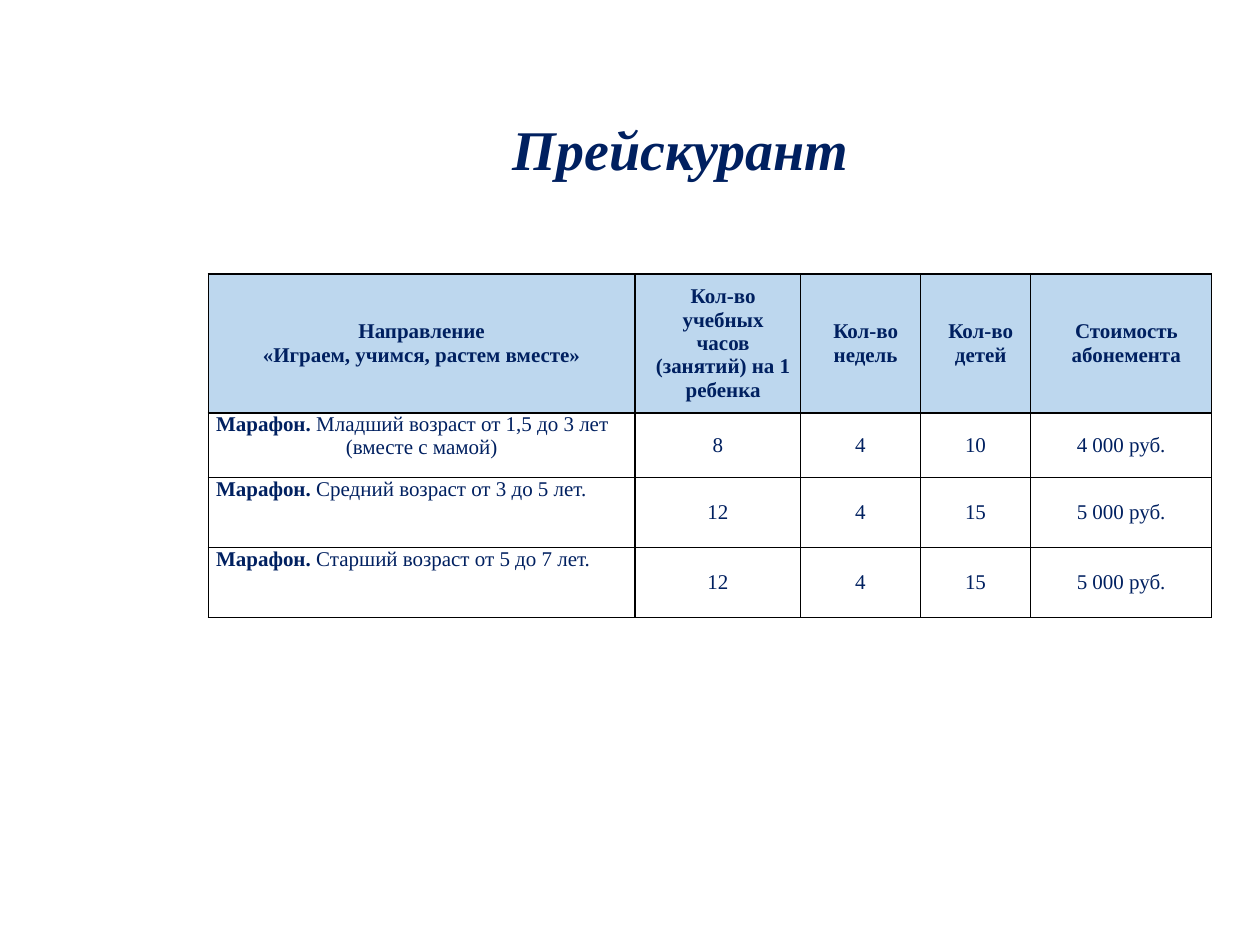
from lxml import etree
from pptx import Presentation
from pptx.dml.color import RGBColor
from pptx.enum.text import MSO_ANCHOR, PP_ALIGN
from pptx.oxml.ns import qn
from pptx.util import Pt

CENTER, LEFT = PP_ALIGN.CENTER, PP_ALIGN.LEFT
MIDDLE, TOP = MSO_ANCHOR.MIDDLE, MSO_ANCHOR.TOP
COLORS = {"text": "002060", "header": "BDD7EE", "border": "000000"}
TITLE_FONT = {"name": "Times New Roman", "size": Pt(32), "bold": True, "italic": True}
CELL_FONT = {"name": "Times New Roman", "size": Pt(12)}
CELL_FORMAT = {"margin_left": Pt(4.5), "margin_right": Pt(4.5),
               "margin_top": 0, "margin_bottom": 0}
COLUMN_WIDTHS = [244, 94.5, 68.5, 63, 103.5]
ROW_HEIGHTS = [79.5, 37, 40, 40]
HEADER_INDENT = Pt(6)
HEADERS = [
    ["Направление", "«Играем, учимся, растем вместе»"],
    ["Кол-во учебных часов (занятий) на 1 ребенка"],
    ["Кол-во недель"],
    ["Кол-во детей"],
    ["Стоимость абонемента"],
]
PROGRAM = "Марафон."
PRICES = [
    ([" Младший возраст от 1,5 до 3 лет", "(вместе с мамой)"], "8", "4", "10", "4 000 руб."),
    ([" Средний возраст от 3 до 5 лет."], "12", "4", "15", "5 000 руб."),
    ([" Старший возраст от 5 до 7 лет."], "12", "4", "15", "5 000 руб."),
]


def apply_format(target, values):
    """Set every attribute named in values on target."""
    for name, value in values.items():
        setattr(target, name, value)


def add_run(paragraph, text, font):
    """Append a run in the slide's text colour."""
    run = paragraph.add_run()
    run.text = text
    apply_format(run.font, font)
    run.font.color.rgb = RGBColor.from_string(COLORS["text"])


def add_title(slide, text):
    """Place and format the slide title."""
    title = slide.shapes.title
    apply_format(title, {"left": Pt(285), "top": Pt(62), "width": Pt(208), "height": Pt(46)})
    apply_format(title.text_frame, {"word_wrap": False, "vertical_anchor": TOP})
    paragraph = title.text_frame.paragraphs[0]
    paragraph.alignment = CENTER
    add_run(paragraph, text, TITLE_FONT)


def add_borders(cell):
    """Draw a one-point line on each side of a cell."""
    properties = cell._tc.get_or_add_tcPr()
    for side in ("lnL", "lnR", "lnT", "lnB"):
        line = etree.SubElement(properties, qn(f"a:{side}"), w=str(Pt(1)))
        fill = etree.SubElement(line, qn("a:solidFill"))
        etree.SubElement(fill, qn("a:srgbClr"), val=COLORS["border"])


def format_cell(cell, anchor, fill=None):
    """Give a cell its margins, anchor, borders and fill."""
    apply_format(cell, {**CELL_FORMAT, "vertical_anchor": anchor})
    add_borders(cell)
    if fill:
        cell.fill.solid()
        cell.fill.fore_color.rgb = RGBColor.from_string(fill)
    else:
        cell.fill.background()


def write_lines(cell, lines, bold=False, indent=0):
    """Write centred paragraphs into a cell."""
    for index, text in enumerate(lines):
        frame = cell.text_frame
        paragraph = frame.add_paragraph() if index else frame.paragraphs[0]
        paragraph.alignment = CENTER
        if indent:
            paragraph._p.get_or_add_pPr().set("marL", str(indent))
        add_run(paragraph, text, {**CELL_FONT, "bold": bold})


def write_program(cell, lines):
    """Write the bold program name before its age group."""
    paragraph = cell.text_frame.paragraphs[0]
    add_run(paragraph, PROGRAM, {**CELL_FONT, "bold": True})
    add_run(paragraph, lines[0], {**CELL_FONT, "bold": False})
    paragraph.alignment = LEFT
    for text in lines[1:]:
        extra = cell.text_frame.add_paragraph()
        extra.alignment = CENTER
        add_run(extra, text, {**CELL_FONT, "bold": False})


def add_price_table(slide):
    """Build the price table with its header and program rows."""
    frame = slide.shapes.add_table(
        len(ROW_HEIGHTS), len(COLUMN_WIDTHS), Pt(119), Pt(156.5),
        Pt(sum(COLUMN_WIDTHS)), Pt(sum(ROW_HEIGHTS)))
    table = frame.table
    apply_format(table, {"first_row": False, "horz_banding": False})
    for column, width in zip(table.columns, COLUMN_WIDTHS):
        column.width = Pt(width)
    for row, height in zip(table.rows, ROW_HEIGHTS):
        row.height = Pt(height)
    for index, lines in enumerate(HEADERS):
        cell = table.cell(0, index)
        format_cell(cell, MIDDLE, COLORS["header"])
        write_lines(cell, lines, bold=True, indent=HEADER_INDENT if index else 0)
    for row_index, (program, *values) in enumerate(PRICES, 1):
        cell = table.cell(row_index, 0)
        format_cell(cell, TOP)
        write_program(cell, program)
        for column_index, value in enumerate(values, 1):
            cell = table.cell(row_index, column_index)
            format_cell(cell, MIDDLE)
            write_lines(cell, [value])


def main():
    """Create the price list slide and save it."""
    presentation = Presentation()
    apply_format(presentation, {"slide_width": Pt(720), "slide_height": Pt(540)})
    slide = presentation.slides.add_slide(presentation.slide_layouts[5])
    add_price_table(slide)
    add_title(slide, "Прейскурант")
    presentation.save("out.pptx")


if __name__ == "__main__":
    main()
